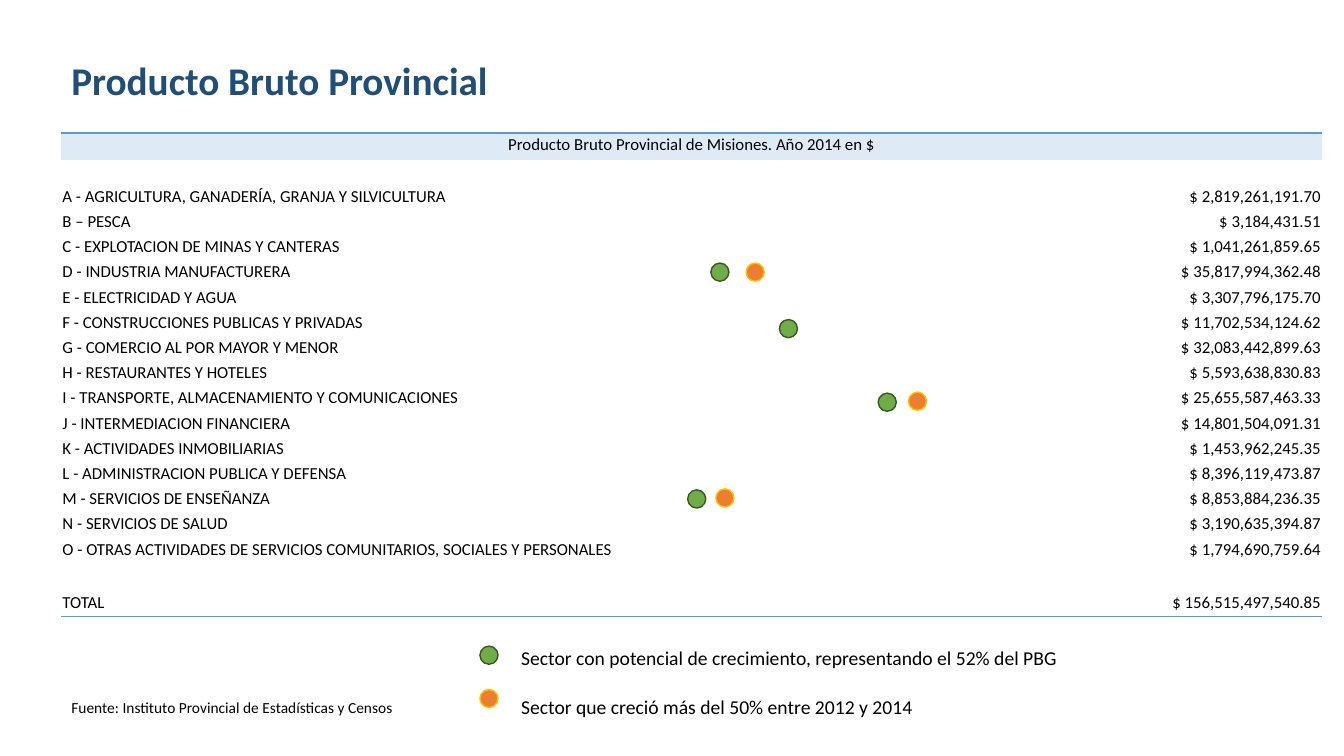
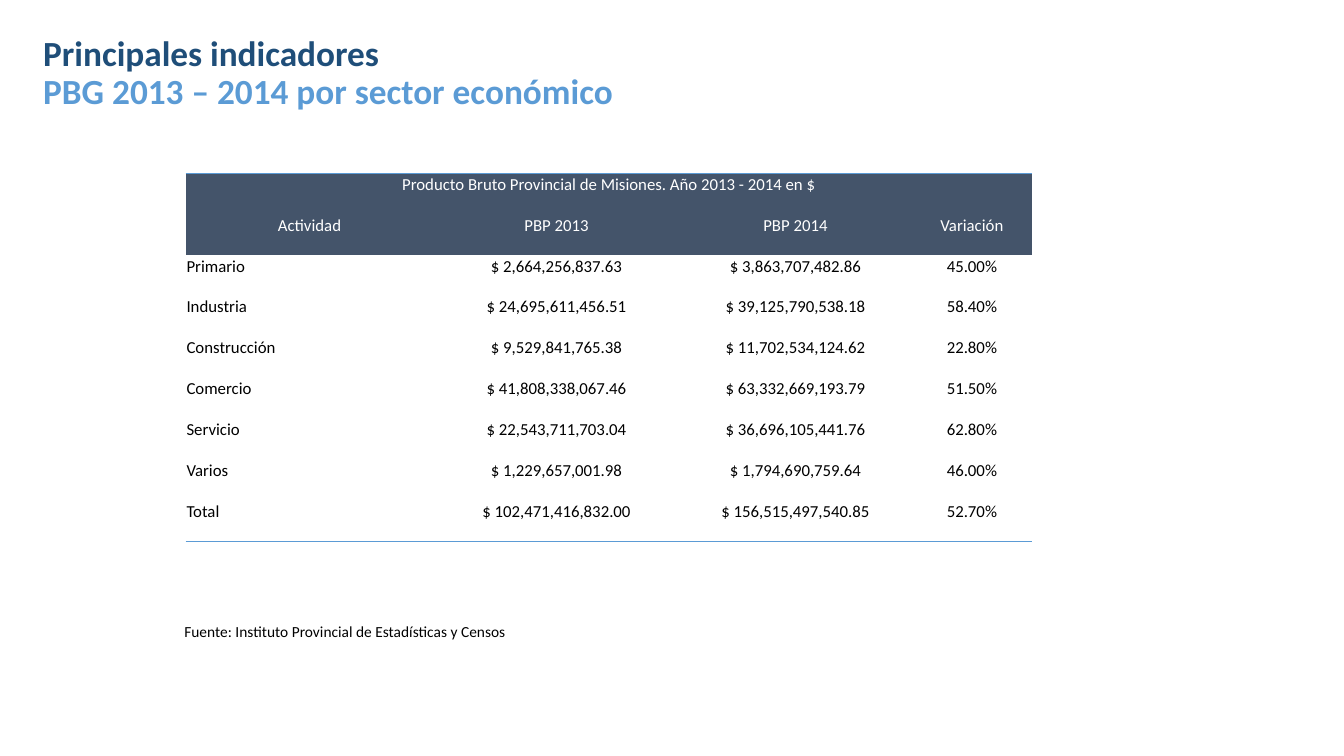
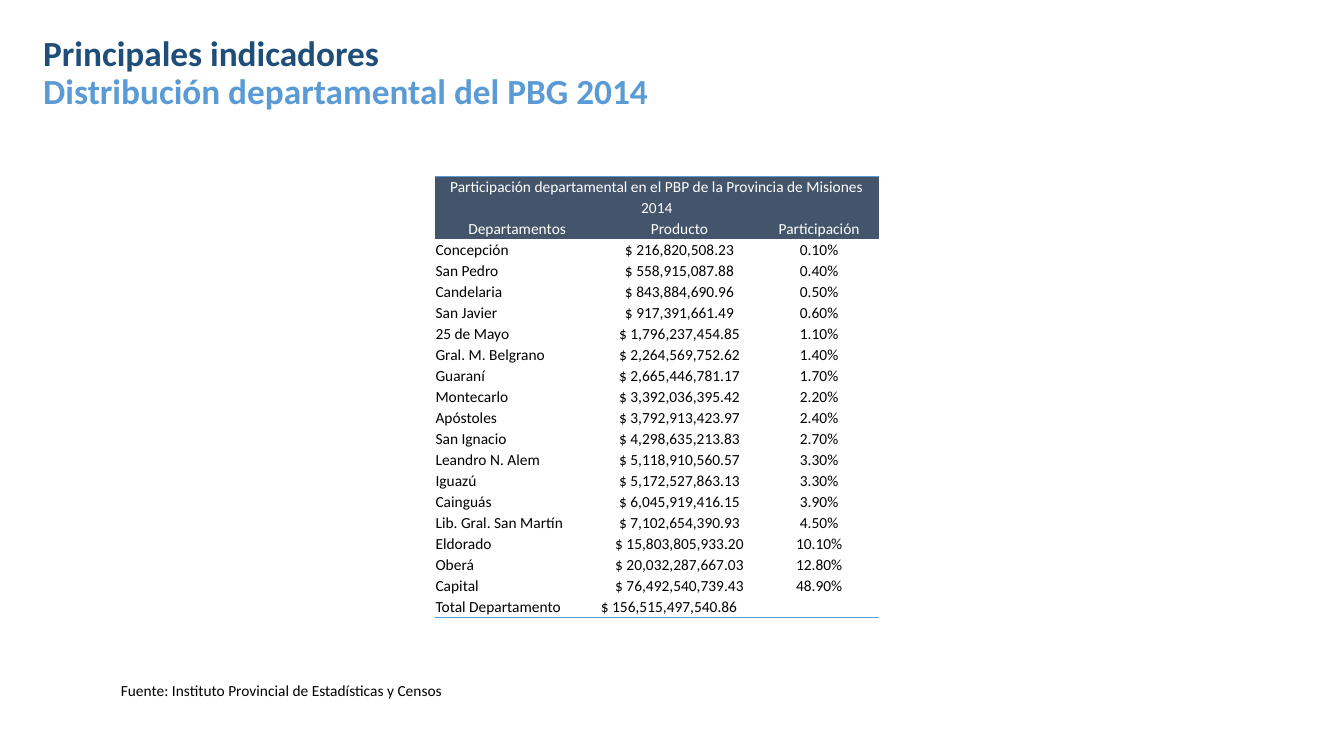
"""Builds three slides on the gross product of Misiones: sectors, yearly change and departments."""
from lxml.etree import SubElement
from pptx import Presentation
from pptx.dml.color import RGBColor as Rgb
from pptx.enum.shapes import MSO_SHAPE as Shape
from pptx.enum.text import MSO_ANCHOR as Anchor, PP_ALIGN as Align
from pptx.oxml.ns import qn
from pptx.util import Pt

PX = 9144
FONT = "Calibri"
NO_STYLE = "{2D5ABB26-0587-4C30-8999-92F81FD0307C}"
COLORS = {
    "black": "000000", "white": "FFFFFF", "navy": "1F4E79", "blue": "5B9BD5",
    "pale": "DEEBF7", "slate": "44546A", "green": "70AD47", "forest": "385723",
    "orange": "ED7D31", "gold": "FFC000",
}
COLORS_RGB = {name: Rgb.from_string(code) for name, code in COLORS.items()}
SOURCE = "Fuente: Instituto Provincial de Estadísticas y Censos"


def add_text(page, left, top, width, height, size, *lines, title=False):
    """Add a text box whose lines are (text, colour) pairs."""
    box = page.shapes.add_textbox(left * PX, top * PX, width * PX, height * PX)
    frame = box.text_frame
    frame.word_wrap = True
    para = frame.paragraphs[0]
    para.font.name, para.font.size, para.font.bold = FONT, Pt(size), title
    if title:
        frame.vertical_anchor = Anchor.BOTTOM
        para.line_spacing = 0.9
    for index, (text, color) in enumerate(lines):
        if index:
            para.add_line_break()
        span = para.add_run()
        span.text = text
        span.font.color.rgb = COLORS_RGB[color]


def add_grid(page, left, top, widths, height, size, rows, heads, head_fill, head_color, value_align):
    """Add a ruled table; a row with a single text spans all columns."""
    table = page.shapes.add_table(
        len(rows), len(widths), left * PX, top * PX, sum(widths) * PX, height * PX).table
    table.first_row = table.horz_banding = False
    table._tbl.tblPr.find(qn("a:tableStyleId")).text = NO_STYLE
    for column, width in zip(table.columns, widths):
        column.width = width * PX
    for r, texts in enumerate(rows):
        for c in range(len(widths)):
            cell = table.cell(r, c)
            cell.margin_left = cell.margin_right = cell.margin_top = PX
            cell.margin_bottom = 0
            for tag, edge in (("a:lnT", 0), ("a:lnB", len(rows) - 1)):
                if r == edge:
                    line = SubElement(cell._tc.get_or_add_tcPr(), qn(tag), w=str(Pt(1)))
                    fill = SubElement(line, qn("a:solidFill"))
                    SubElement(fill, qn("a:srgbClr"), val=COLORS["blue"])
            if r < heads:
                cell.fill.solid()
                cell.fill.fore_color.rgb = COLORS_RGB[head_fill]
            else:
                cell.fill.background()
            text = texts[c] if c < len(texts) else ""
            cell.text = text
            para = cell.text_frame.paragraphs[0]
            para.alignment = Align.CENTER if r < heads else value_align if c else Align.LEFT
            para.font.name, para.font.size = FONT, Pt(size)
            para.font.color.rgb = COLORS_RGB[head_color if r < heads else "black"]
            if not text:
                SubElement(para._p, qn("a:endParaRPr"), sz=str(size * 100))
        if len(texts) == 1:
            table.cell(r, 0).merge(table.cell(r, len(widths) - 1))
    return table


deck = Presentation()
deck.slide_width, deck.slide_height = 1333 * PX, 750 * PX
sector_page, change_page, department_page = [
    deck.slides.add_slide(deck.slide_layouts[6]) for _ in range(3)]

add_text(sector_page, 61, 21, 1229, 87, 28, ("Producto Bruto Provincial", "navy"), title=True)
for page, subtitle in (
    (change_page, "PBG 2013 – 2014 por sector económico"),
    (department_page, "Distribución departamental del PBG 2014"),
):
    add_text(page, 33, 29, 1238, 87, 25.2,
             ("Principales indicadores", "navy"), (subtitle, "blue"), title=True)

for page, left, top, width in (
    (sector_page, 61, 688, 1250),
    (change_page, 173, 612, 1043),
    (department_page, 110, 671, 1043),
):
    add_text(page, left, top, width, 29, 11, (SOURCE, "black"))

sectors = [
    ("Producto Bruto Provincial de Misiones. Año 2014 en $",),
    ("", ""),
    ("A - AGRICULTURA, GANADERÍA, GRANJA Y SILVICULTURA", "$ 2,819,261,191.70"),
    ("B – PESCA", "$ 3,184,431.51"),
    ("C - EXPLOTACION DE MINAS Y CANTERAS", "$ 1,041,261,859.65"),
    ("D - INDUSTRIA MANUFACTURERA", "$ 35,817,994,362.48"),
    ("E - ELECTRICIDAD Y AGUA", "$ 3,307,796,175.70"),
    ("F - CONSTRUCCIONES PUBLICAS Y PRIVADAS", "$ 11,702,534,124.62"),
    ("G - COMERCIO AL POR MAYOR Y MENOR", "$ 32,083,442,899.63"),
    ("H - RESTAURANTES Y HOTELES", "$ 5,593,638,830.83"),
    ("I - TRANSPORTE, ALMACENAMIENTO Y COMUNICACIONES", "$ 25,655,587,463.33"),
    ("J - INTERMEDIACION FINANCIERA", "$ 14,801,504,091.31"),
    ("K - ACTIVIDADES INMOBILIARIAS", "$ 1,453,962,245.35"),
    ("L - ADMINISTRACION PUBLICA Y DEFENSA", "$ 8,396,119,473.87"),
    ("M - SERVICIOS DE ENSEÑANZA", "$ 8,853,884,236.35"),
    ("N - SERVICIOS DE SALUD", "$ 3,190,635,394.87"),
    ("O - OTRAS ACTIVIDADES DE SERVICIOS COMUNITARIOS, SOCIALES Y PERSONALES",
     "$ 1,794,690,759.64"),
    ("TOTAL", "$ 156,515,497,540.85"),
]
sector_table = add_grid(sector_page, 61, 132, (954, 296), 480, 12, sectors,
                        1, "pale", "black", Align.RIGHT)
special_heights = {0: 27, 16: 53}
for index, row in enumerate(sector_table.rows):
    row.height = special_heights.get(index, 25) * PX

for fill, outline, places in (
    ("green", "forest", ((476, 641), (871, 390), (773, 317), (705, 261), (682, 486))),
    ("orange", "gold", ((476, 684), (740, 261), (710, 485), (901, 389))),
):
    for left, top in places:
        dot = sector_page.shapes.add_shape(Shape.OVAL, left * PX, top * PX, 18 * PX, 18 * PX)
        dot.shadow.inherit = False
        dot.fill.solid()
        dot.fill.fore_color.rgb = COLORS_RGB[fill]
        dot.line.color.rgb = COLORS_RGB[outline]
        dot.line.width = Pt(1)

for top, legend in (
    (636, "Sector con potencial de crecimiento, representando el 52% del PBG"),
    (684, "Sector que creció más del 50% entre 2012 y 2014"),
):
    add_text(sector_page, 507, top, 690, 34, 14, (legend, "black"))

changes = [
    ("Producto Bruto Provincial de Misiones. Año 2013 - 2014 en $",),
    ("Actividad", "PBP 2013", "PBP 2014", "Variación"),
    ("Primario", "$ 2,664,256,837.63", "$ 3,863,707,482.86", "45.00%"),
    ("Industria", "$ 24,695,611,456.51", "$ 39,125,790,538.18", "58.40%"),
    ("Construcción", "$ 9,529,841,765.38", "$ 11,702,534,124.62", "22.80%"),
    ("Comercio", "$ 41,808,338,067.46", "$ 63,332,669,193.79", "51.50%"),
    ("Servicio", "$ 22,543,711,703.04", "$ 36,696,105,441.76", "62.80%"),
    ("Varios", "$ 1,229,657,001.98", "$ 1,794,690,759.64", "46.00%"),
    ("Total", "$ 102,471,416,832.00", "$ 156,515,497,540.85", "52.70%"),
]
add_grid(change_page, 184, 172, (246, 244, 230, 120), 365, 12, changes,
         2, "slate", "white", Align.CENTER)

departments = [
    ("Participación departamental en el PBP de la Provincia de Misiones",),
    ("2014",),
    ("Departamentos", "Producto", "Participación"),
    ("Concepción", "$ 216,820,508.23", "0.10%"),
    ("San Pedro", "$ 558,915,087.88", "0.40%"),
    ("Candelaria", "$ 843,884,690.96", "0.50%"),
    ("San Javier", "$ 917,391,661.49", "0.60%"),
    ("25 de Mayo", "$ 1,796,237,454.85", "1.10%"),
    ("Gral. M. Belgrano", "$ 2,264,569,752.62", "1.40%"),
    ("Guaraní", "$ 2,665,446,781.17", "1.70%"),
    ("Montecarlo", "$ 3,392,036,395.42", "2.20%"),
    ("Apóstoles", "$ 3,792,913,423.97", "2.40%"),
    ("San Ignacio", "$ 4,298,635,213.83", "2.70%"),
    ("Leandro N. Alem", "$ 5,118,910,560.57", "3.30%"),
    ("Iguazú", "$ 5,172,527,863.13", "3.30%"),
    ("Cainguás", "$ 6,045,919,416.15", "3.90%"),
    ("Lib. Gral. San Martín", "$ 7,102,654,390.93", "4.50%"),
    ("Eldorado", "$ 15,803,805,933.20", "10.10%"),
    ("Oberá", "$ 20,032,287,667.03", "12.80%"),
    ("Capital", "$ 76,492,540,739.43", "48.90%"),
    ("Total Departamento", "$ 156,515,497,540.86", ""),
]
department_table = add_grid(department_page, 431, 175, (164, 158, 119), 438, 11, departments,
                            3, "slate", "white", Align.CENTER)
total_cell = department_table.cell(len(departments) - 1, 1)
total_cell.text_frame.paragraphs[0].alignment = Align.LEFT

deck.save("out.pptx")
